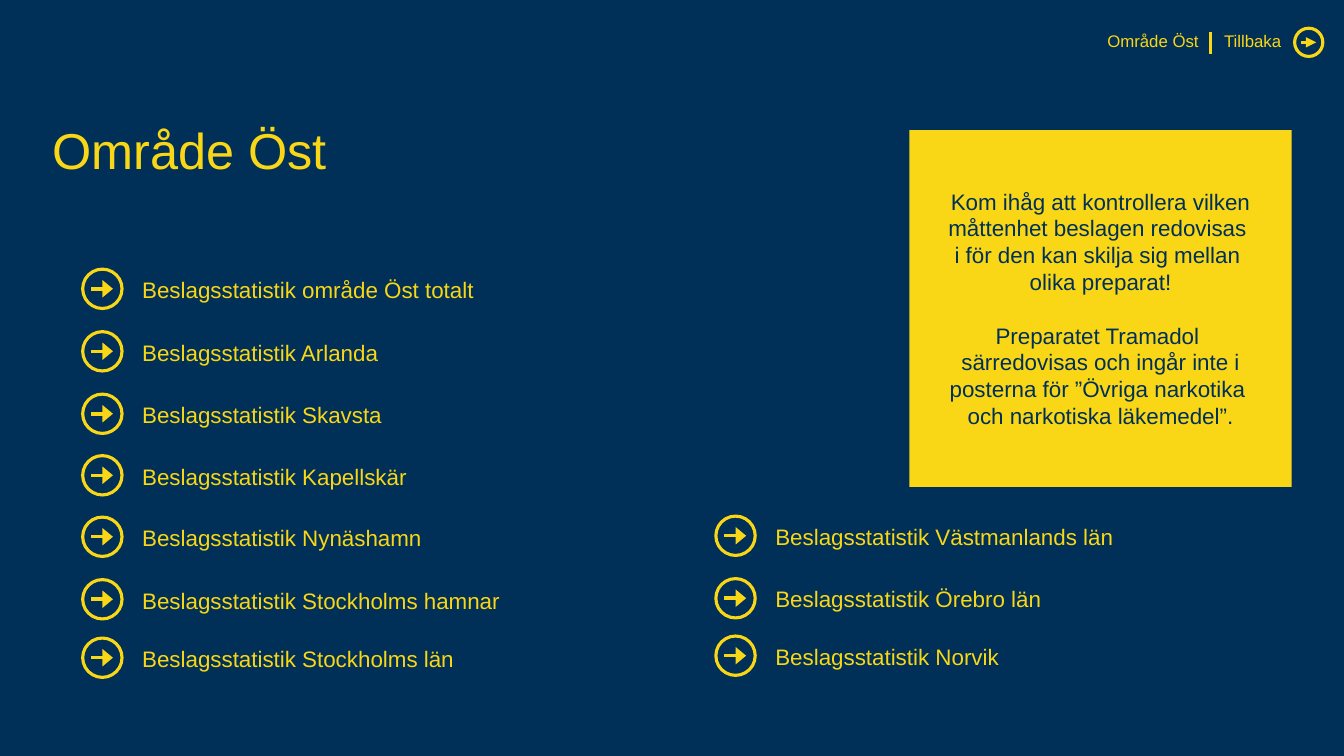
from lxml import etree
from pptx import Presentation
from pptx.dml.color import RGBColor
from pptx.enum.shapes import MSO_CONNECTOR as CONNECTOR, MSO_SHAPE as SHAPE
from pptx.enum.text import MSO_ANCHOR as ANCHOR, PP_ALIGN as ALIGN
from pptx.oxml.ns import qn
from pptx.util import Inches, Pt

COLORS = {"navy": "003057", "yellow": "F9D616"}
FONT = "Arial"
LEFT_LINKS = [
    (2.67, "Beslagsstatistik område Öst totalt"),
    (3.29, "Beslagsstatistik Arlanda"),
    (3.91, "Beslagsstatistik Skavsta"),
    (4.52, "Beslagsstatistik Kapellskär"),
    (5.13, "Beslagsstatistik Nynäshamn"),
    (5.75, "Beslagsstatistik Stockholms hamnar"),
    (6.33, "Beslagsstatistik Stockholms län"),
]
RIGHT_LINKS = [
    (5.12, "Beslagsstatistik Västmanlands län"),
    (5.74, "Beslagsstatistik Örebro län"),
    (6.31, "Beslagsstatistik Norvik"),
]
NOTE = [
    "Kom ihåg att kontrollera vilken måttenhet beslagen redovisas \v"
    "i för den kan skilja sig mellan \volika preparat!",
    "Preparatet Tramadol \vsärredovisas och ingår inte i posterna för "
    "”Övriga narkotika \voch narkotiska läkemedel”.",
]


def color(name):
    return RGBColor.from_string(COLORS[name])


def fill_text(shape, paragraphs, size, ink="yellow", align=ALIGN.LEFT,
              anchor=ANCHOR.TOP, line_spacing=1.0, gap=0):
    frame = shape.text_frame
    frame.word_wrap = True
    frame.vertical_anchor = anchor
    frame.margin_left = frame.margin_right = 0
    frame.margin_top = frame.margin_bottom = 0
    for index, text in enumerate(paragraphs):
        paragraph = frame.add_paragraph() if index else frame.paragraphs[0]
        paragraph.text = text
        paragraph.alignment = align
        paragraph.line_spacing = line_spacing
        paragraph.space_before = Pt(gap if index else 0)
        paragraph.font.name = FONT
        paragraph.font.size = Pt(size)
        paragraph.font.color.rgb = color(ink)


def add_text(slide, left, top, width, height, paragraphs, size, **style):
    box = slide.shapes.add_textbox(Inches(left), Inches(top), Inches(width), Inches(height))
    fill_text(box, paragraphs, size, **style)


def add_line(slide, start, end, width, head=None):
    line = slide.shapes.add_connector(
        CONNECTOR.STRAIGHT, *(Inches(value) for value in (*start, *end)))
    line.line.color.rgb = color("yellow")
    line.line.width = Pt(width)
    if head:
        outline = line.line._get_or_add_ln()
        etree.SubElement(outline, qn("a:tailEnd"), type="triangle", w=head, len="med")
    properties = line._element.spPr
    etree.SubElement(properties, qn("a:effectLst"))


def add_arrow_icon(slide, left, top, diameter, head):
    middle = top + diameter / 2
    tail = left + 0.22 * diameter
    add_line(slide, (tail, middle), (tail + 0.55 * diameter, middle), 2.5, head)
    ring = slide.shapes.add_shape(
        SHAPE.OVAL, Inches(left), Inches(top), Inches(diameter), Inches(diameter))
    ring.shadow.inherit = False
    ring.fill.background()
    ring.line.color.rgb = color("yellow")
    ring.line.width = Pt(2.25)


def add_navigation(slide, left, top):
    """Area name, divider and back button."""
    add_text(slide, left, top + 0.04, 4.93, 0.31, ["Område Öst"], 12,
             align=ALIGN.RIGHT, line_spacing=0.9)
    add_line(slide, (left + 5.05, top + 0.03), (left + 5.05, top + 0.25), 2.25)
    add_text(slide, left + 5.18, top + 0.04, 0.65, 0.19, ["Tillbaka"], 12, line_spacing=0.9)
    add_arrow_icon(slide, left + 5.88, top - 0.01, 0.28, "med")


def add_title(slide, left, top, width, height):
    title = slide.shapes.title
    title.left, title.top = Inches(left), Inches(top)
    title.width, title.height = Inches(width), Inches(height)
    fill_text(title, ["Område Öst"], 36, anchor=ANCHOR.MIDDLE, line_spacing=0.9)


def add_links(slide, left, links):
    for top, label in links:
        add_arrow_icon(slide, left, top, 0.39, "lg")
        add_text(slide, left + 0.59, top + 0.07, 4.42, 0.3, [label], 16)


def add_note(slide, left, top, width, height):
    panel = slide.shapes.add_shape(
        SHAPE.RECTANGLE, Inches(left), Inches(top), Inches(width), Inches(height))
    panel.shadow.inherit = False
    panel.fill.solid()
    panel.fill.fore_color.rgb = color("yellow")
    panel.line.fill.background()
    add_text(slide, left + 0.2, top, width - 0.4, height, NOTE, 16, ink="navy",
             align=ALIGN.CENTER, anchor=ANCHOR.MIDDLE, gap=19)


def main():
    presentation = Presentation()
    presentation.slide_width, presentation.slide_height = Inches(13.33), Inches(7.5)
    slide = presentation.slides.add_slide(presentation.slide_layouts[5])
    slide.background.fill.solid()
    slide.background.fill.fore_color.rgb = color("navy")

    add_title(slide, 0.52, 0.79, 12.28, 1.45)
    add_navigation(slide, 6.96, 0.29)
    add_links(slide, 0.82, LEFT_LINKS)
    add_links(slide, 7.1, RIGHT_LINKS)
    add_note(slide, 9.02, 1.29, 3.79, 3.54)
    presentation.save("out.pptx")


if __name__ == "__main__":
    main()
